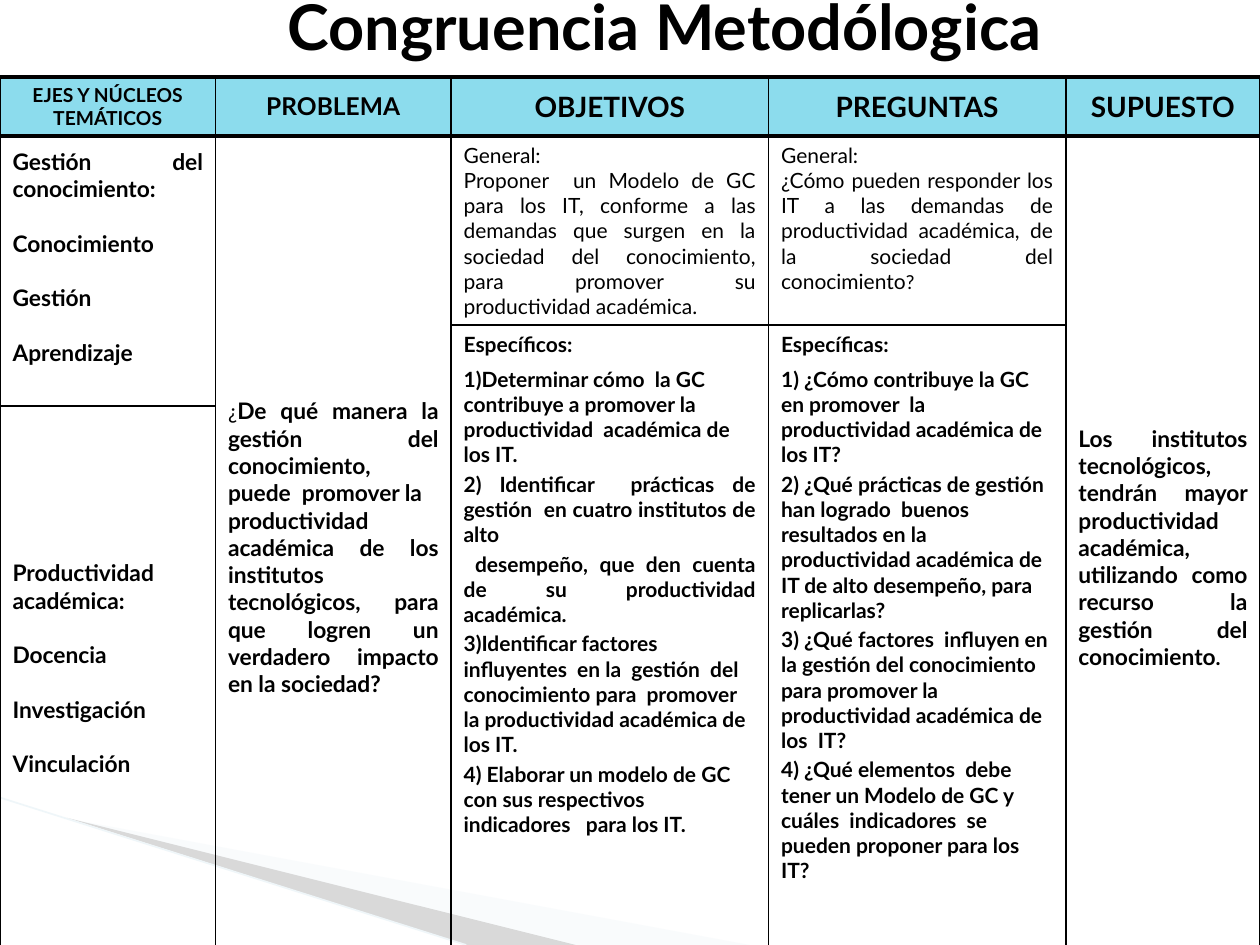
"""Build the methodological congruence matrix slide."""
from dataclasses import dataclass

from lxml import etree
from pptx import Presentation
from pptx import util as u
from pptx.dml.color import RGBColor
from pptx.enum import shapes, text
from pptx.oxml.ns import qn

FONT = "Lato"
COLORS = {"ink": "000000", "header": "78D6EA", "body": "FFFFFF",
          "wave": "A0CBDC", "edge": "97C5D8"}
CENTER, JUSTIFY, LEFT = text.PP_ALIGN.CENTER, text.PP_ALIGN.JUSTIFY, text.PP_ALIGN.LEFT
THIN, THICK = 1, 2.25
BLANK_LINE = 15.6
BEFORE, AFTER = 2.4, 3.2


@dataclass
class Run:
    words: str
    size: float = 12
    bold: bool = True


@dataclass
class Para:
    runs: list[Run]
    align: int = JUSTIFY
    before: float = 0
    after: float = 0


@dataclass
class Cell:
    row: int
    col: int
    paras: list[Para]
    row_span: int = 1
    middle: bool = True
    bottom: float = 0.05


@dataclass
class Ribbon:
    points: list[tuple[float, float]]
    color: str
    alpha: int


def one(words: str, size: float = 12, bold: bool = True, **layout) -> Para:
    return Para([Run(words, size, bold)], **layout)


def themes(heading: str, *topics: str) -> list[Para]:
    return [one(heading, 13)] + [one(topic, 13, before=BLANK_LINE) for topic in topics]


def general(statement: Para) -> list[Para]:
    return [one("General:", bold=False), statement]


def specifics(heading: str, *items: Para) -> list[Para]:
    return [one(heading, after=AFTER), *items]


def item(words: str, align: int = LEFT) -> Para:
    return one(words, align=align, before=BEFORE)


def write(paragraph, words: str, *, size: float, bold: bool, align: int,
          before: float = 0, after: float = 0) -> None:
    paragraph.alignment = align
    paragraph.space_before, paragraph.space_after = u.Pt(before), u.Pt(after)
    run = paragraph.add_run()
    run.text = words
    run.font.name, run.font.size, run.font.bold = FONT, u.Pt(size), bold
    run.font.color.rgb = RGBColor.from_string(COLORS["ink"])


def set_fill(fill, color: str, alpha: int) -> None:
    fill.solid()
    fill.fore_color.rgb = RGBColor.from_string(COLORS[color])
    tint = fill._xPr.find(qn("a:solidFill"))[0]
    etree.SubElement(tint, qn("a:alpha"), val=str(alpha * 1000))


def set_borders(cell, top: float, bottom: float) -> None:
    props = cell._tc.get_or_add_tcPr()
    widths = {"lnL": THIN, "lnR": THIN, "lnT": top, "lnB": bottom}
    for place, (side, width) in enumerate(widths.items()):
        line = etree.Element(qn(f"a:{side}"), w=str(u.Pt(width)))
        solid = etree.SubElement(line, qn("a:solidFill"))
        etree.SubElement(solid, qn("a:srgbClr"), val=COLORS["ink"])
        props.insert(place, line)


def draw_ribbon(slide, ribbon: Ribbon) -> None:
    start, *rest = [(u.Inches(x), u.Inches(y)) for x, y in ribbon.points]
    builder = slide.shapes.build_freeform(*start)
    builder.add_line_segments(rest, close=True)
    band = builder.convert_to_shape()
    band.shadow.inherit = False
    set_fill(band.fill, ribbon.color, ribbon.alpha)
    band.line.fill.background()


def draw_edge(slide) -> None:
    edge = slide.shapes.add_connector(
        shapes.MSO_CONNECTOR.STRAIGHT, 0, u.Inches(6.33), u.Inches(3.7), u.Inches(7.5))
    edge.line.color.rgb = RGBColor.from_string(COLORS["edge"])
    edge.line.width = u.Pt(0.95)
    etree.SubElement(edge._element.spPr, qn("a:effectLst"))


def draw_cell(matrix, content: Cell) -> None:
    cell = matrix.cell(content.row, content.col)
    last = content.row + content.row_span - 1
    if content.row_span > 1:
        cell.merge(matrix.cell(last, content.col))
    cell.vertical_anchor = text.MSO_ANCHOR.MIDDLE if content.middle else text.MSO_ANCHOR.TOP
    cell.margin_bottom = u.Inches(content.bottom)
    set_fill(cell.fill, "body" if content.row else "header", 85)
    set_borders(cell, THICK if content.row < 2 else THIN, THICK if last in (0, 3) else THIN)
    frame = cell.text_frame
    for index, para in enumerate(content.paras):
        paragraph = frame.add_paragraph() if index else frame.paragraphs[0]
        for run in para.runs:
            write(paragraph, run.words, size=run.size, bold=run.bold,
                  align=para.align, before=para.before, after=para.after)


RIBBONS = [
    Ribbon([(0.55, 6.5), (5.95, 7.5), (4.56, 7.5)], "wave", 40),
    Ribbon([(0.53, 6.49), (4.57, 7.5), (3.7, 7.5)], "ink", 100),
]
COLUMNS = [1.71, 1.87, 2.52, 2.36, 1.54]
ROWS = [0.47, 1.5, 0.64, 4.39]
HEADERS = [("EJES Y NÚCLEOS TEMÁTICOS", 11), ("PROBLEMA", 14), ("OBJETIVOS", 16),
           ("PREGUNTAS", 16), ("SUPUESTO", 16)]
CELLS = [Cell(0, col, [one(words, size, align=CENTER)])
         for col, (words, size) in enumerate(HEADERS)] + [
    Cell(1, 0, themes("Gestión del conocimiento:", "Conocimiento", "Gestión", "Aprendizaje"),
         row_span=2, bottom=0.27),
    Cell(3, 0, themes("Productividad académica:", "Docencia", "Investigación", "Vinculación"),
         bottom=0.27),
    Cell(1, 1, [
        Para([Run("¿", 12, False),
              Run("De qué manera la gestión del conocimiento, puede  promover la", 13)]),
        one("productividad  académica de los institutos tecnológicos, para que logren "
            "un verdadero impacto en la sociedad?", 13)], row_span=3),
    Cell(1, 2, general(one(
        "Proponer  un Modelo de GC para los IT, conforme a las demandas que surgen en la "
        "sociedad del conocimiento, para promover su productividad académica.",
        bold=False)), middle=False),
    Cell(1, 3, general(Para([
        Run("¿Cómo pueden responder los IT a las demandas de productividad académica, "
            "de la sociedad del conocimiento", 12, False), Run("?", 11, False)])),
        middle=False),
    Cell(1, 4, [Para([
        Run("Los institutos tecnológicos, tendrán mayor productividad académica,  "
            "utilizando como recurso la gestión del conocimiento", 13), Run(".")])],
        row_span=3),
    Cell(2, 2, specifics(
        "Específicos:",
        item("1)Determinar cómo  la GC contribuye a promover la  productividad  "
             "académica de los IT."),
        item("2) Identificar  prácticas de gestión  en cuatro institutos de alto", JUSTIFY),
        item(" desempeño, que den cuenta de su productividad académica.", JUSTIFY),
        item("3)Identificar factores influyentes  en la  gestión  del conocimiento para  "
             "promover la productividad académica de los IT."),
        item("4) Elaborar un modelo de GC con sus respectivos indicadores   para los IT.")),
        row_span=2, middle=False),
    Cell(2, 3, specifics(
        "Específicas:",
        item("1) ¿Cómo contribuye la GC  en promover  la productividad académica de los IT?"),
        item("2) ¿Qué prácticas de gestión  han logrado  buenos  resultados en la "
             "productividad académica de  IT de alto desempeño, para replicarlas?"),
        item("3) ¿Qué factores  influyen en la gestión del conocimiento para promover la "
             "productividad académica de los  IT?"),
        item("4) ¿Qué elementos  debe tener un Modelo de GC y cuáles  indicadores  se "
             "pueden proponer para los  IT?")),
        row_span=2, middle=False),
]


def main() -> None:
    deck = Presentation()
    deck.slide_width, deck.slide_height = u.Inches(10), u.Inches(7.5)
    slide = deck.slides.add_slide(deck.slide_layouts[5])
    title = slide.shapes.title
    title.left, title.top = u.Inches(0.55), u.Inches(-0.19)
    title.width, title.height = u.Inches(9.45), u.Inches(0.79)
    title.text_frame.vertical_anchor = text.MSO_ANCHOR.MIDDLE
    write(title.text_frame.paragraphs[0], "Congruencia Metodólogica",
          size=36, bold=True, align=CENTER)
    for ribbon in RIBBONS:
        draw_ribbon(slide, ribbon)
    draw_edge(slide)
    matrix = slide.shapes.add_table(len(ROWS), len(COLUMNS), 0, u.Inches(0.61),
                                    u.Inches(10), u.Inches(7)).table
    matrix.first_row = matrix.horz_banding = False
    for column, width in zip(matrix.columns, COLUMNS):
        column.width = u.Inches(width)
    for row, height in zip(matrix.rows, ROWS):
        row.height = u.Inches(height)
    for content in CELLS:
        draw_cell(matrix, content)
    deck.save("out.pptx")


if __name__ == "__main__":
    main()
